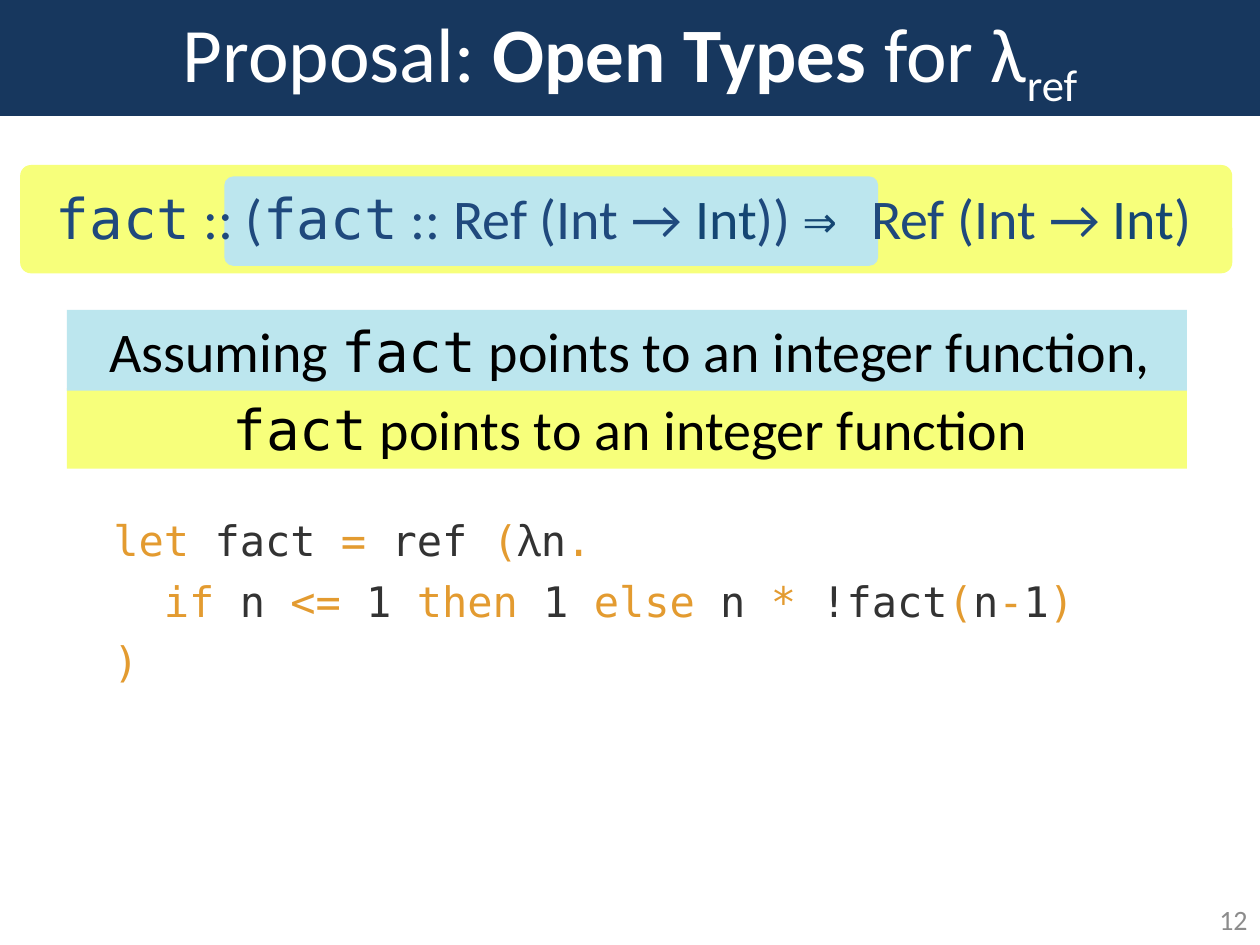
import pptx
import pptx.dml.color
import pptx.enum.shapes
import pptx.enum.text
import pptx.util

WIDTH, HEIGHT = 10, 7.5
ALIGN = pptx.enum.text.PP_ALIGN
SANS, MONO, GREEK = "Calibri", "DejaVu Sans Mono", "Noto Sans"
COLORS = {
    "banner": "17375E", "white": "FFFFFF", "number": "8C8C8C",
    "conclusion": "F7FF7B", "assumption": "BCE6EE",
    "type": "1F497D", "type_dark": "144673", "black": "000000",
    "keyword": "E39B30", "code": "333333",
}
BAND_LEFT, BAND_TOP, BAND_WIDTH, BAND_HEIGHT = 0.53, 2.46, 8.89, 0.64
BAND_STEP = 0.62

TITLE = [[("Proposal: ", {}), ("Open Types", {"bold": True}),
          (" for λ", {}), ("ref", {"baseline": -25000})]]

DARK = {"color": "type_dark"}
SIGNATURE = [[
    ("fact", {"font": MONO}), (" :: (", {}), ("fact", {"font": MONO}),
    (" :: Ref (Int → ", {}), ("Int", DARK), (")) ", {}),
    ("⇒ ", {"font": MONO, "color": "type_dark"}),
    ("Ref (Int → ", {}), ("Int", DARK), (") ", {}),
]]

READING = [
    [("Assuming ", {}), ("fact", {"font": MONO}),
     (" points to an integer function,", {})],
    [("fact", {"font": MONO}), (" points to an integer function", {})],
]

KEYWORD = {"color": "keyword"}
PROGRAM = [
    [("let ", KEYWORD), ("fact ", {}), ("=", KEYWORD), (" ref ", {}),
     ("(", KEYWORD), ("λ", {"font": GREEK}), ("n", {}), (".", KEYWORD)],
    [("  if ", KEYWORD), ("n ", {}), ("<=", KEYWORD), (" 1 ", {}),
     ("then ", KEYWORD), ("1", {}), (" else ", KEYWORD), ("n ", {}),
     ("* ", KEYWORD), ("!fact", {}), ("(", KEYWORD), ("n", {}),
     ("-", KEYWORD), ("1", {}), (")", KEYWORD)],
    [(")", KEYWORD)],
]


def rgb(name):
    return pptx.dml.color.RGBColor.from_string(COLORS[name])


def inches(*lengths):
    return [pptx.util.Inches(length) for length in lengths]


def write(frame, lines, size, color, font=SANS, align=ALIGN.LEFT, after=0,
          anchor=pptx.enum.text.MSO_ANCHOR.MIDDLE):
    frame.word_wrap = True
    frame.vertical_anchor = anchor
    for index, line in enumerate(lines):
        paragraph = frame.add_paragraph() if index else frame.paragraphs[0]
        paragraph.alignment = align
        paragraph.space_after = pptx.util.Pt(after)
        for words, style in line:
            run = paragraph.add_run()
            run.text = words
            run.font.size = pptx.util.Pt(size)
            run.font.name = style.get("font", font)
            run.font.bold = style.get("bold", False)
            run.font.color.rgb = rgb(style.get("color", color))
            if "baseline" in style:
                run.font._element.set("baseline", str(style["baseline"]))


def add_text(slide, box, lines, grow=True, margin=None, **style):
    frame = slide.shapes.add_textbox(*inches(*box)).text_frame
    if margin is not None:
        frame.margin_left = frame.margin_right = pptx.util.Inches(margin)
        frame.margin_top = frame.margin_bottom = pptx.util.Inches(margin)
    write(frame, lines, **style)
    if grow:
        frame.auto_size = pptx.enum.text.MSO_AUTO_SIZE.SHAPE_TO_FIT_TEXT


def add_highlights(slide, color, row, signature_box):
    band = (BAND_LEFT, BAND_TOP + row * BAND_STEP, BAND_WIDTH, BAND_HEIGHT)
    group = slide.shapes.add_group_shape()
    for box, rounding in ((band, 0), (signature_box, 0.1)):
        highlight = group.shapes.add_shape(
            pptx.enum.shapes.MSO_SHAPE.ROUNDED_RECTANGLE, *inches(*box))
        highlight.adjustments[0] = rounding
        highlight.shadow.inherit = False
        highlight.fill.solid()
        highlight.fill.fore_color.rgb = rgb(color)
        highlight.line.fill.background()


def add_title(slide):
    banner = slide.shapes.title
    banner.left, banner.top, banner.width, banner.height = inches(0, 0, WIDTH, 0.92)
    banner.fill.solid()
    banner.fill.fore_color.rgb = rgb("banner")
    write(banner.text_frame, TITLE, size=44, color="white", align=ALIGN.CENTER)
    banner.text_frame.auto_size = pptx.enum.text.MSO_AUTO_SIZE.NONE


def main():
    deck = pptx.Presentation()
    deck.slide_width, deck.slide_height = inches(WIDTH, HEIGHT)
    slide = deck.slides.add_slide(deck.slide_layouts.get_by_name("Title Only"))

    add_title(slide)
    add_highlights(slide, "conclusion", 1, (0.16, 1.31, 9.62, 0.86))
    add_text(slide, (7.67, HEIGHT - 0.4, 2.33, 0.4), [[("12", {})]], grow=False,
             size=16, color="number", align=ALIGN.RIGHT)
    add_text(slide, (0.9, 4.08, 8.21, 1.38), PROGRAM, margin=0, size=24,
             color="code", font=MONO, after=6,
             anchor=pptx.enum.text.MSO_ANCHOR.TOP)
    add_highlights(slide, "assumption", 0, (1.78, 1.4, 5.19, 0.71))
    add_text(slide, (0, 1.4, WIDTH, 0.64), SIGNATURE, size=32, color="type",
             align=ALIGN.CENTER, after=12)
    add_text(slide, (BAND_LEFT, BAND_TOP, 8.94, BAND_STEP + BAND_HEIGHT), READING,
             size=32, color="black", align=ALIGN.CENTER, after=6)
    deck.save("out.pptx")


if __name__ == "__main__":
    main()
